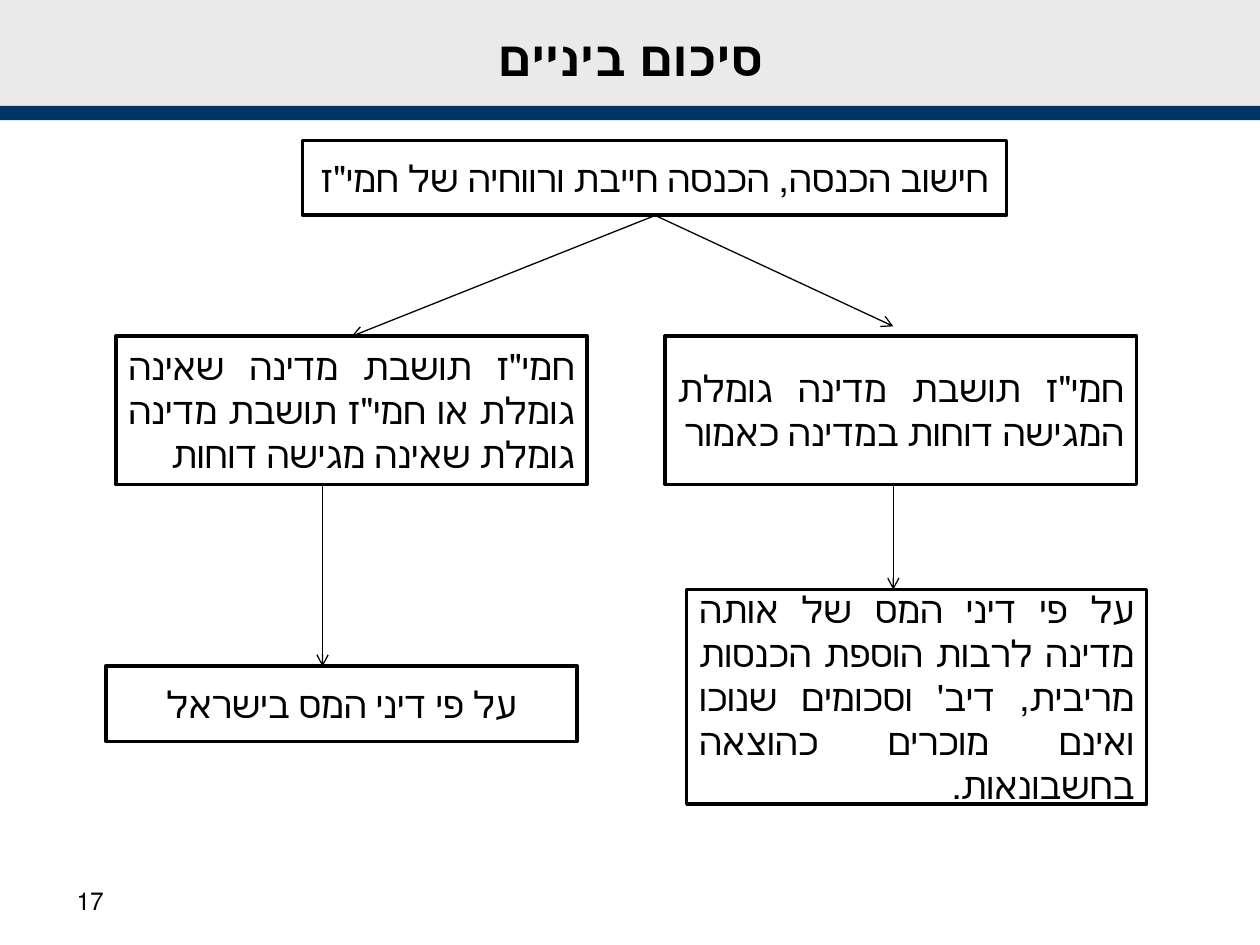
"""Build a slide with a decision tree on computing a foreign company's income."""
import pptx
import pptx.dml.color
import pptx.enum.shapes
import pptx.enum.text
import pptx.oxml.ns
import pptx.util
from lxml import etree

RGB = pptx.dml.color.RGBColor
BLACK = RGB(0x00, 0x00, 0x00)
WHITE = RGB(0xFF, 0xFF, 0xFF)
GREY = RGB(0xEA, 0xEA, 0xEA)
NAVY = RGB(0x00, 0x33, 0x66)

WIDTH, HEIGHT = pptx.util.Inches(10), pptx.util.Inches(7.5)
COLUMNS, ROWS = 100, 75
ALIGN = pptx.enum.text.PP_ALIGN
ANCHOR = pptx.enum.text.MSO_ANCHOR
RECTANGLE = pptx.enum.shapes.MSO_SHAPE.RECTANGLE
STRAIGHT = pptx.enum.shapes.MSO_CONNECTOR.STRAIGHT
qn = pptx.oxml.ns.qn

BANDS = [((0, 0, 100, 8.5), GREY), ((0, 8.4, 100, 1.15), NAVY)]
BOXES = [
    ((24, 11.15, 55.9, 5.9), ALIGN.CENTER, 'חישוב הכנסה, הכנסה חייבת ורווחיה של חמי"ז'),
    ((9.2, 26.65, 37.4, 11.8), ALIGN.JUSTIFY,
     'חמי"ז תושבת מדינה שאינה גומלת או חמי"ז תושבת מדינה גומלת שאינה מגישה דוחות'),
    ((52.8, 26.65, 37.4, 11.8), ALIGN.JUSTIFY,
     'חמי"ז תושבת מדינה גומלת המגישה דוחות במדינה כאמור'),
    ((8.4, 52.85, 37.4, 6), ALIGN.CENTER, 'על פי דיני המס בישראל'),
    ((54.5, 46.8, 36.5, 17), ALIGN.JUSTIFY,
     "על פי דיני המס של אותה מדינה לרבות הוספת הכנסות מריבית, דיב' "
     "וסכומים שנוכו ואינם מוכרים כהוצאה בחשבונאות."),
]
ARROWS = [
    (52, 17.1, 27.9, 26.7),
    (52, 17.1, 70.9, 25.9),
    (25.6, 38.4, 25.6, 52.9),
    (70.9, 38.1, 70.9, 46.8),
]


def place(cells):
    """Turn column and row pairs into slide lengths."""
    units = (WIDTH / COLUMNS, HEIGHT / ROWS) * 2
    return [round(cell * unit) for cell, unit in zip(cells, units)]


def write(shape, text, size, align, anchor=ANCHOR.MIDDLE, bold=False):
    """Write one right-to-left paragraph into a shape."""
    tf = shape.text_frame
    frame = {"word_wrap": True, "vertical_anchor": anchor,
             "auto_size": pptx.enum.text.MSO_AUTO_SIZE.NONE}
    for name, value in frame.items():
        setattr(tf, name, value)
    p = tf.paragraphs[0]
    p.alignment = align
    p._p.get_or_add_pPr().set("rtl", "1")
    r = p.add_run()
    r.text = text
    font = {"name": "Arial", "size": pptx.util.Pt(size), "bold": bold,
            "language_id": pptx.enum.lang.MSO_LANGUAGE_ID.HEBREW}
    for name, value in font.items():
        setattr(r.font, name, value)
    r.font.color.rgb = BLACK


def add_rectangle(s, cells, fill):
    """Add a plain filled rectangle."""
    sp = s.shapes.add_shape(RECTANGLE, *place(cells))
    sp.shadow.inherit = False
    sp.fill.solid()
    sp.fill.fore_color.rgb = fill
    sp.line.fill.background()
    return sp


def add_box(s, cells, align, text):
    """Add an outlined box of the tree."""
    sp = add_rectangle(s, cells, WHITE)
    sp.line.color.rgb = BLACK
    sp.line.width = pptx.util.Pt(2)
    write(sp, text, 21, align)


def add_arrow(s, cells):
    """Add a thin line with an open arrowhead at its end."""
    sp = s.shapes.add_connector(STRAIGHT, *place(cells))
    sp.line.color.rgb = BLACK
    sp.line.width = pptx.util.Pt(0.75)
    etree.SubElement(sp.line._get_or_add_ln(), qn("a:tailEnd"), type="arrow")
    etree.SubElement(sp._element.spPr, qn("a:effectLst"))


def add_title(s, cells, text):
    """Move the title placeholder into the heading band and fill it."""
    sp = s.shapes.title
    for name, value in zip(("left", "top", "width", "height"), place(cells)):
        setattr(sp, name, value)
    write(sp, text, 28, ALIGN.CENTER, bold=True)
    s.shapes._spTree.append(sp._element)


def main():
    """Build and save the slide."""
    prs = pptx.Presentation()
    prs.slide_width, prs.slide_height = WIDTH, HEIGHT
    s = prs.slides.add_slide(prs.slide_layouts[5])
    for cells, fill in BANDS:
        add_rectangle(s, cells, fill)
    add_title(s, (2, 0.3, 96.1, 8.4), "סיכום ביניים")
    for cells in ARROWS:
        add_arrow(s, cells)
    for box in BOXES:
        add_box(s, *box)
    number = s.shapes.add_textbox(*place((5.1, 69.8, 23.3, 5.2)))
    write(number, "17", 14, ALIGN.LEFT, ANCHOR.TOP)
    prs.save("out.pptx")


if __name__ == "__main__":
    main()
